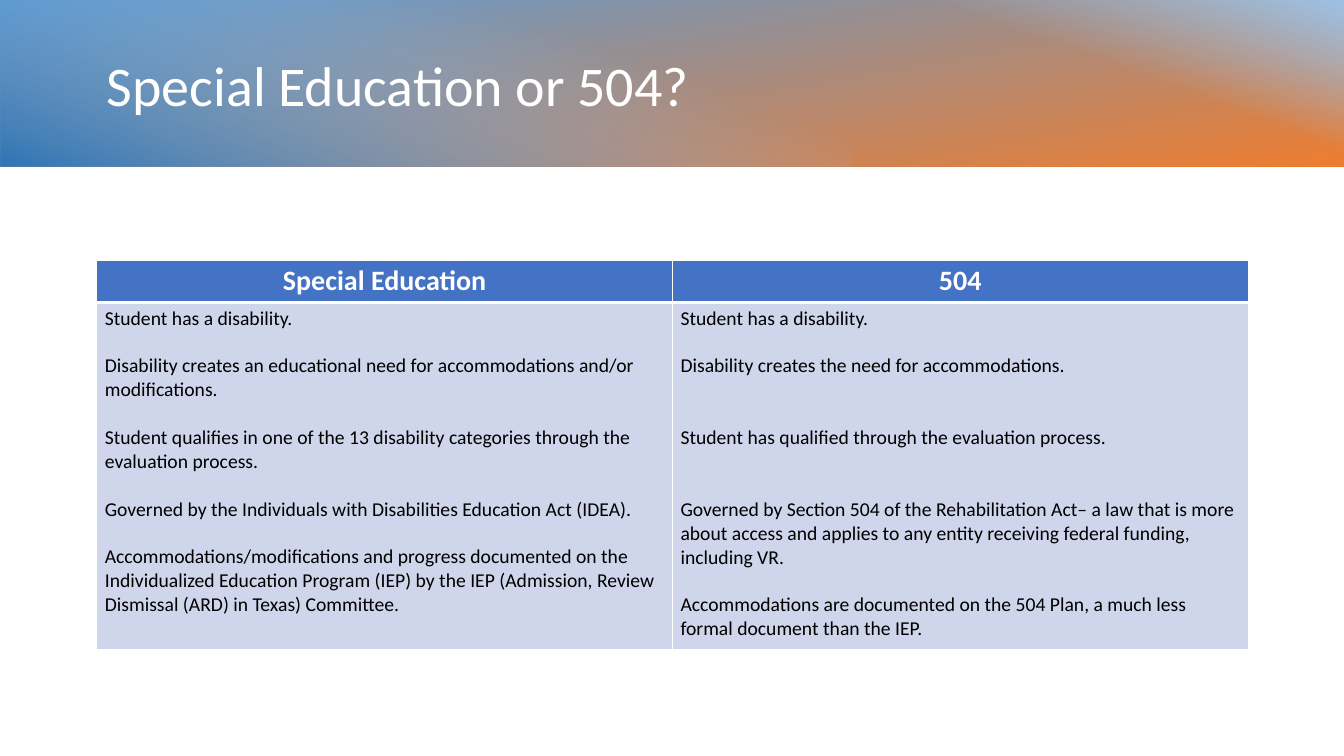
from lxml import etree
from pptx import Presentation
from pptx.dml.color import RGBColor
from pptx.enum.shapes import MSO_SHAPE
from pptx.enum.text import MSO_ANCHOR, PP_ALIGN
from pptx.oxml import parse_xml
from pptx.util import Inches, Pt

RECT = MSO_SHAPE.RECTANGLE
LEFT, CENTER = PP_ALIGN.LEFT, PP_ALIGN.CENTER
MIDDLE, TOP = MSO_ANCHOR.MIDDLE, MSO_ANCHOR.TOP
NS = "http://schemas.openxmlformats.org/drawingml/2006/main"
FONT, WHITE, BLACK = "Calibri", "FFFFFF", "000000"
LINE = 17.1

TITLE = "Special Education or 504?"
HEADS = ["Special Education", "504"]
BODIES = [
    [
        (0, "Student has a disability."),
        (1, "Disability creates an educational need for accommodations and/or modifications."),
        (1, "Student qualifies in one of the 13 disability categories through the evaluation process."),
        (1, "Governed by the Individuals with Disabilities Education Act (IDEA)."),
        (1, "Accommodations/modifications and progress documented on the Individualized Education "
            "Program (IEP) by the IEP (Admission, Review Dismissal (ARD) in Texas) Committee."),
    ],
    [
        (0, "Student has a disability."),
        (1, "Disability creates the need for accommodations."),
        (2, "Student has qualified through the evaluation process."),
        (2, "Governed by Section 504 of the Rehabilitation Act– a law that is more about access "
            "and applies to any entity receiving federal funding, including VR."),
        (1, "Accommodations are documented on the 504 Plan, a much less formal document than the IEP."),
    ],
]
BANDS = [
    (0, 13.33, 270, 170, [(0, "5B9BD5", 100), (100, "ED7D31", 100)]),
    (7.79, 5.54, 270, 20, [(59, "9DC3E6", 0), (100, "9DC3E6", 100)]),
    (0, 8.44, 90, 20, [(29, "9DC3E6", 0), (100, "2E75B6", 100)]),
]
BAND_H = 1.65
MARGIN, COL_W, TABLE_Y = 0.96, 5.71, 2.58
ROWS = [0.4, 3.44]


def rgb(code):
    return RGBColor.from_string(code)


def add_band(slide, left, width, turn, angle, stops):
    mid = left + width / 2
    band = slide.shapes.add_shape(
        RECT, Inches(mid - BAND_H / 2), Inches((BAND_H - width) / 2),
        Inches(BAND_H), Inches(width))
    band.rotation = turn
    band.shadow.inherit = False
    band.line.fill.background()
    band.fill.background()
    marks = "".join(
        f'<a:gs pos="{pos * 1000}"><a:srgbClr val="{code}">'
        f'<a:alpha val="{alpha * 1000}"/></a:srgbClr></a:gs>'
        for pos, code, alpha in stops)
    grad = parse_xml(
        f'<a:gradFill xmlns:a="{NS}" rotWithShape="1"><a:gsLst>{marks}</a:gsLst>'
        f'<a:lin ang="{angle * 60000}" scaled="0"/></a:gradFill>')
    props = band._element.spPr
    props.replace(props.find(f"{{{NS}}}noFill"), grad)


def add_edges(cell, top, bottom):
    props = cell._tc.get_or_add_tcPr()
    edges = [("L", 1), ("R", 1), ("T", top), ("B", bottom)]
    for spot, (side, width) in enumerate(edges):
        edge = etree.Element(f"{{{NS}}}ln{side}", w=str(Pt(width)))
        fill = etree.SubElement(edge, f"{{{NS}}}solidFill")
        etree.SubElement(fill, f"{{{NS}}}srgbClr", val=WHITE)
        props.insert(spot, edge)


def style(para, size, color, bold, align):
    para.alignment = align
    font = para.font
    font.name, font.size, font.bold = FONT, Pt(size), bold
    font.color.rgb = rgb(color)


def fill_cell(cell, items, back, size, color, bold, align, top, bottom):
    cell.fill.solid()
    cell.fill.fore_color.rgb = rgb(back)
    add_edges(cell, top, bottom)
    cell.vertical_anchor = TOP
    cell.margin_left = cell.margin_right = Inches(0.08)
    cell.margin_top = cell.margin_bottom = Inches(0.04)
    frame = cell.text_frame
    for num, (gap, text) in enumerate(items):
        para = frame.add_paragraph() if num else frame.paragraphs[0]
        para.text = text
        para.space_before = Pt(gap * LINE)
        style(para, size, color, bold, align)


def main():
    deck = Presentation()
    deck.slide_width, deck.slide_height = Inches(13.33), Inches(7.5)
    slide = deck.slides.add_slide(deck.slide_layouts[5])
    for band in BANDS:
        add_band(slide, *band)

    title = slide.shapes.title
    title.left, title.top = Inches(MARGIN), Inches(0.33)
    title.width, title.height = Inches(11.46), Inches(1.1)
    title.text = TITLE
    title.text_frame.vertical_anchor = MIDDLE
    para = title.text_frame.paragraphs[0]
    para.line_spacing = 0.9
    style(para, 40, WHITE, False, LEFT)
    slide.shapes._spTree.append(title._element)

    table = slide.shapes.add_table(
        len(ROWS), len(HEADS), Inches(MARGIN), Inches(TABLE_Y),
        Inches(COL_W * len(HEADS)), Inches(sum(ROWS))).table
    for row, height in zip(table.rows, ROWS):
        row.height = Inches(height)
    for col, (head, body) in enumerate(zip(HEADS, BODIES)):
        table.columns[col].width = Inches(COL_W)
        fill_cell(table.cell(0, col), [(0, head)], "4472C4", 20, WHITE, True, CENTER, 1, 3)
        fill_cell(table.cell(1, col), body, "CFD5EA", 14, BLACK, False, LEFT, 3, 1)
    deck.save("out.pptx")


if __name__ == "__main__":
    main()
